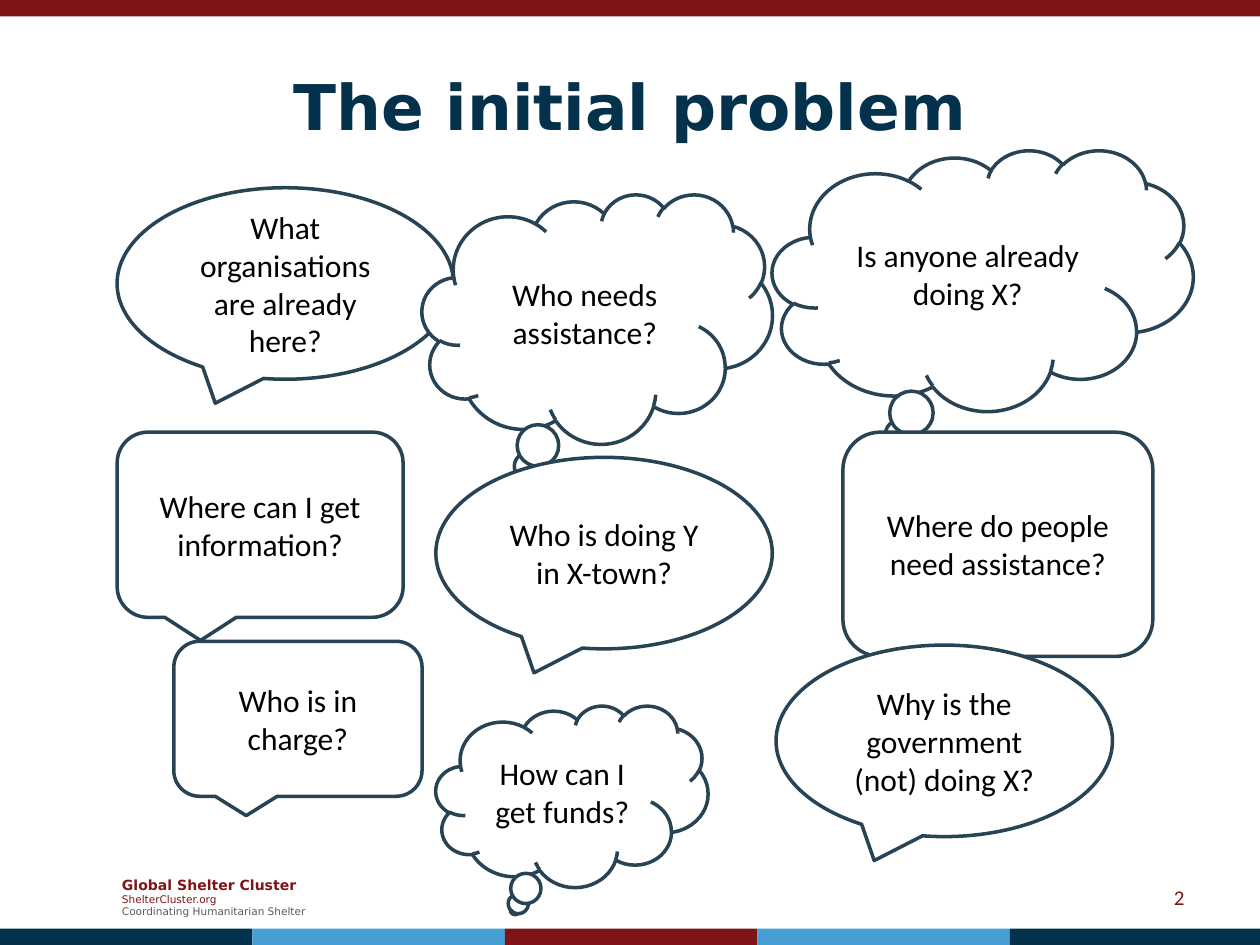
from pptx import Presentation
from pptx.dml.color import RGBColor
from pptx.enum.shapes import MSO_SHAPE
from pptx.enum.text import MSO_ANCHOR, PP_ALIGN
from pptx.util import Inches, Pt

RECTANGLE = MSO_SHAPE.RECTANGLE
OVAL = MSO_SHAPE.OVAL_CALLOUT
CLOUD = MSO_SHAPE.CLOUD_CALLOUT
ROUNDED = MSO_SHAPE.ROUNDED_RECTANGULAR_CALLOUT
MIDDLE = MSO_ANCHOR.MIDDLE
LEFT, CENTER, RIGHT = PP_ALIGN.LEFT, PP_ALIGN.CENTER, PP_ALIGN.RIGHT

RED, NAVY, BLUE = "7F1416", "04314C", "459FD5"
WHITE, BLACK, GREY, OUTLINE = "FFFFFF", "000000", "595959", "284353"

TITLE = {"name": "DejaVu Sans", "size": Pt(36), "bold": True}
QUESTION = {"name": "Calibri", "size": Pt(18)}
NUMBER = {"name": "Calibri", "size": Pt(12)}
BRAND = {"name": "DejaVu Sans", "size": Pt(8), "bold": True}
TAGLINE = {"name": "DejaVu Sans", "size": Pt(6), "bold": False}

QUESTIONS = [
    (OVAL, (0.93, 1.49, 2.67, 1.52), "What organisations are already here?"),
    (CLOUD, (6.13, 1.19, 3.34, 2.07), "Is anyone already doing X?"),
    (ROUNDED, (6.69, 3.43, 2.46, 1.78), "Where do people need assistance?"),
    (CLOUD, (3.35, 1.54, 2.78, 1.98), "Who needs assistance?"),
    (ROUNDED, (0.93, 3.43, 2.27, 1.47), "Where can I get information?"),
    (CLOUD, (3.46, 5.6, 2.16, 1.44), "How can I get funds?"),
    (OVAL, (3.46, 3.63, 2.67, 1.52), "Who is doing Y in X-town?"),
    (OVAL, (6.16, 5.12, 2.67, 1.52), "Why is the government (not) doing X?"),
    (ROUNDED, (1.38, 5.09, 1.97, 1.23), "Who is in charge?"),
]


def color(value):
    """Return the colour of a hex string."""
    return RGBColor.from_string(value)


def inches(box):
    """Convert left, top, width and height to lengths."""
    return [Inches(value) for value in box]


def write(shape, lines, align):
    """Fill a shape with one paragraph for each text, format and colour."""
    frame = shape.text_frame
    frame.word_wrap = True
    frame.vertical_anchor = MIDDLE
    for index, (text, style, shade) in enumerate(lines):
        para = frame.paragraphs[0] if index == 0 else frame.add_paragraph()
        para.alignment = align
        span = para.add_run()
        span.text = text
        span.font.color.rgb = color(shade)
        for key, value in style.items():
            setattr(span.font, key, value)


def add_text(page, box, lines, align):
    """Place a text box."""
    write(page.shapes.add_textbox(*inches(box)), lines, align)


def add_filled(page, kind, box, fill):
    """Place a filled preset shape without shadow or outline."""
    shape = page.shapes.add_shape(kind, *inches(box))
    shape.shadow.inherit = False
    shape.fill.solid()
    shape.fill.fore_color.rgb = color(fill)
    shape.line.fill.background()
    return shape


def add_stripes(page, box, fills):
    """Divide a band into equal coloured stripes."""
    left, top, width, height = box
    step = width / len(fills)
    for index, fill in enumerate(fills):
        add_filled(page, RECTANGLE, (left + index * step, top, step, height), fill)


def add_bubble(page, kind, box, question):
    """Place an outlined callout that asks a question."""
    bubble = add_filled(page, kind, box, WHITE)
    bubble.line.color.rgb = color(OUTLINE)
    bubble.line.width = Pt(2)
    write(bubble, [(question, QUESTION, BLACK)], CENTER)


def add_footer(page, box):
    """Place the three lines that name the organisation."""
    lines = [
        ("Global Shelter Cluster", BRAND, RED),
        ("ShelterCluster.org", TAGLINE, RED),
        ("Coordinating Humanitarian Shelter", TAGLINE, GREY),
    ]
    add_text(page, box, lines, LEFT)


def main():
    """Build the slide and save the deck."""
    deck = Presentation()
    deck.slide_width, deck.slide_height = Inches(10), Inches(7.5)
    page = deck.slides.add_slide(deck.slide_layouts[6])
    add_footer(page, (0.87, 6.9, 1.73, 0.44))
    add_stripes(page, (0, 0, 10, 0.13), [RED])
    add_stripes(page, (0, 7.37, 10.02, 0.13), [NAVY, BLUE, RED, BLUE, NAVY])
    add_text(page, (0.5, 0.21, 9, 1.25), [("The initial problem", TITLE, NAVY)], CENTER)
    for kind, box, question in QUESTIONS:
        add_bubble(page, kind, box, question)
    add_text(page, (7.17, 6.92, 2.33, 0.4), [("2", NUMBER, RED)], RIGHT)
    deck.save("out.pptx")


if __name__ == "__main__":
    main()
